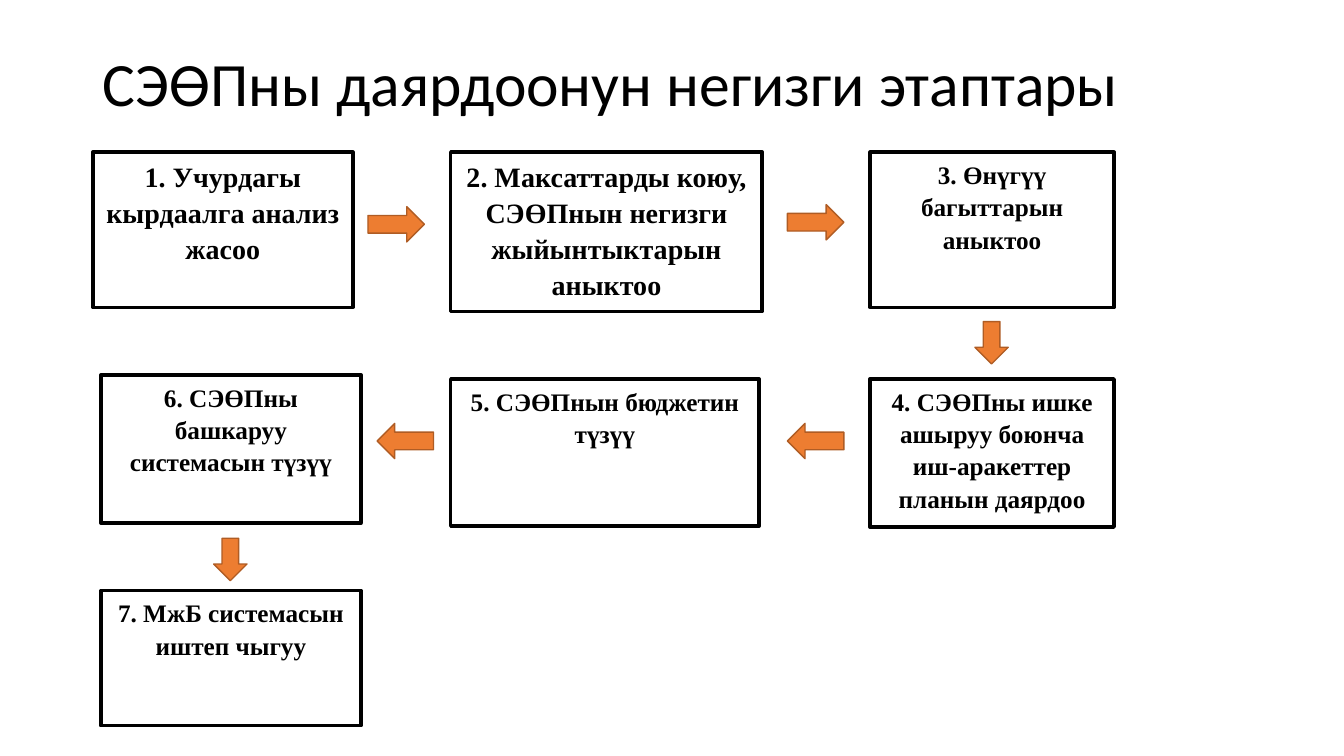
import pptx
import pptx.dml.color
import pptx.enum.shapes
import pptx.enum.text
import pptx.util

Inches = pptx.util.Inches
Pt = pptx.util.Pt
RGBColor = pptx.dml.color.RGBColor
MSO_SHAPE = pptx.enum.shapes.MSO_SHAPE
PP_ALIGN = pptx.enum.text.PP_ALIGN
MSO_ANCHOR = pptx.enum.text.MSO_ANCHOR

BLACK = RGBColor(0x00, 0x00, 0x00)
WHITE = RGBColor(0xFF, 0xFF, 0xFF)
ORANGE = RGBColor(0xED, 0x7D, 0x31)
BROWN = RGBColor(0xAF, 0x5C, 0x24)


def add_outlined_shape(kind, left, top, width, height, fill, line, line_width):
    shape = slide.shapes.add_shape(
        kind, Inches(left), Inches(top), Inches(width), Inches(height))
    shape.shadow.inherit = False
    shape.fill.solid()
    shape.fill.fore_color.rgb = fill
    shape.line.color.rgb = line
    shape.line.width = Pt(line_width)
    return shape


def format_text(text_frame, anchor, alignment, spacing, font_name, size, bold):
    text_frame.word_wrap = True
    text_frame.auto_size = pptx.enum.text.MSO_AUTO_SIZE.NONE
    text_frame.vertical_anchor = anchor
    paragraph = text_frame.paragraphs[0]
    paragraph.alignment = alignment
    paragraph.line_spacing = spacing
    font = paragraph.runs[0].font
    font.name = font_name
    font.size = Pt(size)
    font.bold = bold
    font.color.rgb = BLACK
    return paragraph


presentation = pptx.Presentation()
presentation.slide_width = Inches(13.33)
presentation.slide_height = Inches(7.5)
slide = presentation.slides.add_slide(presentation.slide_layouts[5])

# Title
title = slide.shapes.title
title.left, title.top = Inches(0.92), Inches(0.4)
title.width, title.height = Inches(11.5), Inches(0.91)
title.text_frame.text = "СЭӨПны даярдоонун негизги этаптары"
format_text(title.text_frame, MSO_ANCHOR.MIDDLE, PP_ALIGN.LEFT, 0.9,
            "Calibri", 44, False)

# Grid shared by the stages: column lefts and row tops
FIRST, SECOND, THIRD = 1.0, 4.47, 8.63
TOP, MIDDLE, BOTTOM = 1.51, 3.76, 5.86

# Stages: text, left, top, width, height, font size
stages = [
    ("1. Учурдагы кырдаалга анализ жасоо", FIRST - 0.08, TOP, 2.58, 1.54, 20),
    ("2. Максаттарды коюу, СЭӨПнын негизги жыйынтыктарын аныктоо",
     SECOND, TOP, 3.09, 1.58, 20),
    ("3. Өнүгүү багыттарын аныктоо", THIRD, TOP, 2.42, 1.54, 18),
    ("4. СЭӨПны ишке ашыруу боюнча иш-аракеттер планын даярдоо",
     THIRD, MIDDLE, 2.42, 1.47, 18),
    ("5. СЭӨПнын бюджетин түзүү", SECOND, MIDDLE, 3.06, 1.46, 18),
    ("6. СЭӨПны башкаруу системасын түзүү",
     FIRST, MIDDLE - 0.04, 2.58, 1.47, 18),
    ("7. МжБ системасын иштеп чыгуу", FIRST, BOTTOM, 2.58, 1.34, 18),
]
for text, left, top, width, height, size in stages:
    box = add_outlined_shape(MSO_SHAPE.RECTANGLE, left, top, width, height,
                             WHITE, BLACK, 2.5)
    box.text_frame.text = text
    paragraph = format_text(box.text_frame, MSO_ANCHOR.TOP, PP_ALIGN.CENTER,
                            1.07, "Times New Roman", size, True)
    paragraph.space_after = Pt(8)

# Arrows from each stage to the next
ACROSS = (0.56, 0.35)
DOWN = (0.33, 0.42)
arrows = [
    (MSO_SHAPE.RIGHT_ARROW, 3.65, 2.05, ACROSS),
    (MSO_SHAPE.RIGHT_ARROW, 7.81, 2.03, ACROSS),
    (MSO_SHAPE.DOWN_ARROW, 9.67, 3.19, DOWN),
    (MSO_SHAPE.LEFT_ARROW, 7.81, 4.2, ACROSS),
    (MSO_SHAPE.LEFT_ARROW, 3.74, 4.2, ACROSS),
    (MSO_SHAPE.DOWN_ARROW, 2.12, 5.34, DOWN),
]
for kind, left, top, (width, height) in arrows:
    add_outlined_shape(kind, left, top, width, height, ORANGE, BROWN, 1)

presentation.save("out.pptx")
